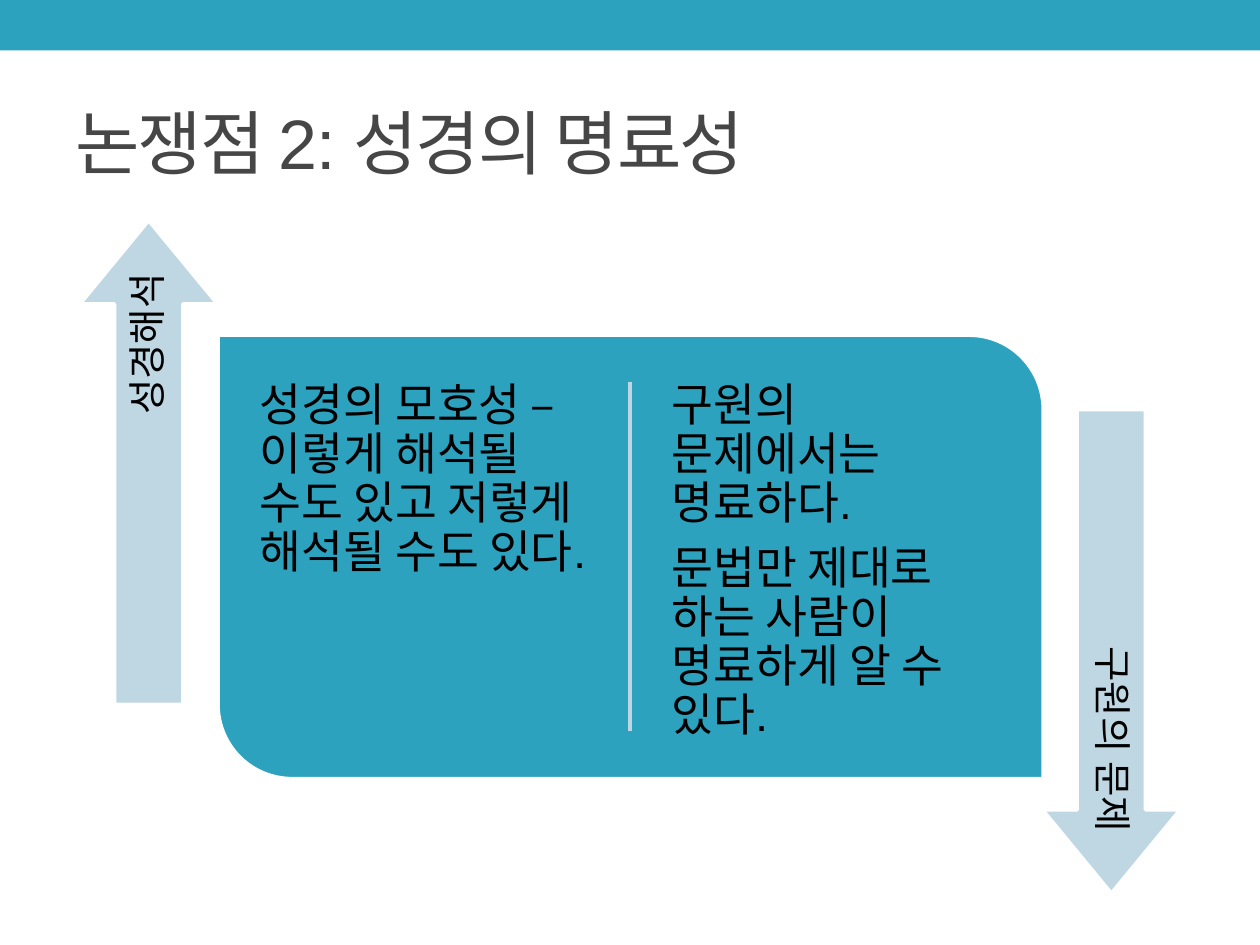
"""Build a slide contrasting two views on the clarity of scripture."""
import pptx
import pptx.dml.color
import pptx.enum.shapes
import pptx.enum.text
import pptx.oxml.ns
import pptx.util
from lxml import etree

COLS, ROWS = 10, 7.5
CELL = pptx.util.Inches(1)
FONT = "Arial"
TEAL = pptx.dml.color.RGBColor(0x2D, 0xA2, 0xBF)
PALE = pptx.dml.color.RGBColor(0xBE, 0xD7, 0xE2)
WHITE = pptx.dml.color.RGBColor(0xFF, 0xFF, 0xFF)
GREY = pptx.dml.color.RGBColor(0x46, 0x46, 0x46)
BLACK = pptx.dml.color.RGBColor(0, 0, 0)
LINE = pptx.util.Pt(2.08)
SHAPE = pptx.enum.shapes.MSO_SHAPE
ALIGN = pptx.enum.text.PP_ALIGN
ANCHOR = pptx.enum.text.MSO_ANCHOR


def grid(*cells):
    """Convert grid cells to slide lengths."""
    return [round(c * CELL) for c in cells]


def centred(x, y, w, h):
    """Give the box of the given size around a centre."""
    return x - w / 2, y - h / 2, w, h


def add_block(s, kind, box, fill, outlined=True, adjustments=(), rotation=0):
    """Add a filled preset shape, outlined in white if wanted."""
    sp = s.shapes.add_shape(kind, *grid(*box))
    sp.shadow.inherit = False
    sp.rotation = rotation
    for i, value in enumerate(adjustments):
        sp.adjustments[i] = value
    sp.fill.solid()
    sp.fill.fore_color.rgb = fill
    if outlined:
        sp.line.color.rgb = WHITE
        sp.line.width = LINE
    else:
        sp.line.fill.background()


def add_text(s, box, paragraphs, size, color=BLACK, inset=0.1, anchor=ANCHOR.TOP,
             align=ALIGN.LEFT, spacing=0.9, after=0, rotation=0):
    """Add a wrapped text box and return its text frame."""
    sp = s.shapes.add_textbox(*grid(*box))
    sp.rotation = rotation
    tf = sp.text_frame
    tf.word_wrap = True
    tf.vertical_anchor = anchor
    tf.margin_left = tf.margin_top = tf.margin_right = tf.margin_bottom = grid(inset)[0]
    tf.text = "\n".join(paragraphs)
    for p in tf.paragraphs:
        p.alignment = align
        p.line_spacing = spacing
        p.space_after = pptx.util.Pt(after)
        p.font.name = FONT
        p.font.size = pptx.util.Pt(size)
        p.font.color.rgb = color
    return tf


def add_title(s, text):
    """Add the slightly tightened slide title."""
    tf = add_text(s, (0.5, 0.58, 9, 1.08), [text], 40, GREY,
                  anchor=ANCHOR.MIDDLE, spacing=1)
    for r in tf.paragraphs[0].runs:
        r.font.element.set("spc", "-100") if hasattr(r.font, "element") else \
            r._r.get_or_add_rPr().set("spc", "-100")


def add_divider(s, x, top, bottom):
    """Add the vertical line between the two views."""
    line = s.shapes.add_connector(pptx.enum.shapes.MSO_CONNECTOR.STRAIGHT,
                                  *grid(x, top, x, bottom))
    line.line.color.rgb = PALE
    line.line.width = LINE
    etree.SubElement(line._element.spPr, pptx.oxml.ns.qn("a:effectLst"))


def add_arrow(s, x, y, rotation, label):
    """Add a vertical arrow whose label sits slightly towards its tail."""
    add_block(s, SHAPE.RIGHT_ARROW, centred(x, y, 3.84, 1.09), PALE,
              adjustments=(0.498, 0.607), rotation=rotation)
    shift = 0.165 if rotation == 270 else -0.165
    add_text(s, centred(x, y + shift, 3.51, 0.54), [label], 22, inset=0.09,
             anchor=ANCHOR.MIDDLE, align=ALIGN.RIGHT, after=7.7, rotation=rotation)


def main():
    """Build and save the slide."""
    prs = pptx.Presentation()
    prs.slide_width, prs.slide_height = grid(COLS, ROWS)
    s = prs.slides.add_slide(prs.slide_layouts[6])
    add_block(s, SHAPE.RECTANGLE, (0, 0, COLS, 0.4), TEAL, outlined=False)
    add_title(s, "논쟁점 2: 성경의 명료성")
    add_block(s, SHAPE.ROUND_2_DIAG_RECTANGLE, (1.73, 2.66, 6.55, 3.52), TEAL,
              adjustments=(0, 0.167))
    add_divider(s, COLS / 2, 3.03, 5.8)
    views = (
        ["성경의 모호성 – 이렇게 해석될 수도 있고 저렇게 해석될 수도 있다."],
        ["구원의 문제에서는 명료하다.", "문법만 제대로 하는 사람이 명료하게 알 수 있다."],
    )
    for i, view in enumerate(views):
        add_text(s, (1.95 + i * 3.27, 2.92, 2.84, 2.99), view, 26, inset=0.11, after=9.1)
    add_arrow(s, 1.18, 3.67, 270, "성경해석")
    add_arrow(s, COLS - 1.18, 5.17, 90, "구원의 문제 ")
    prs.save("out.pptx")


if __name__ == "__main__":
    main()
